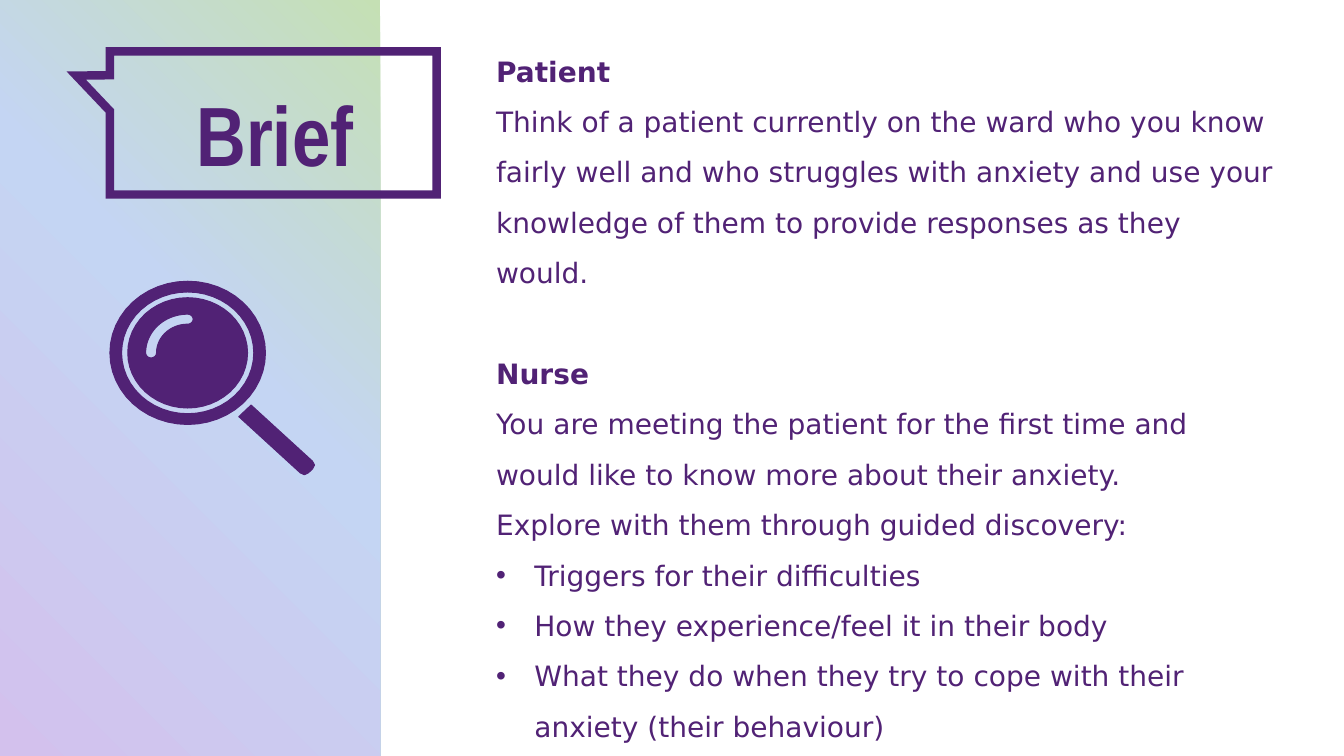
import math

import pptx
import pptx.dml.color
import pptx.enum.shapes
import pptx.enum.text
import pptx.oxml
import pptx.oxml.ns
import pptx.util

W, H = 13.33, 7.5
PURPLE = "512275"
PANEL_STOPS = [(0, "D3C1ED"), (56, "C4D5F3"), (100, "C5E0B4")]
BRIEF = [
    ("heading", "Patient"),
    ("text", "Think of a patient currently on the ward who you know fairly well and who "
             "struggles with anxiety and use your knowledge of them to provide responses "
             "as they would."),
    ("heading", "Nurse"),
    ("text", "You are meeting the patient for the first time and would like to know more "
             "about their anxiety."),
    ("text", "Explore with them through guided discovery:"),
    ("bullet", "Triggers for their difficulties"),
    ("bullet", "How they experience/feel it in their body"),
    ("bullet", "What they do when they try to cope with their anxiety (their behaviour)"),
]


def rgb(value):
    """Turn a hex string into a colour."""
    return pptx.dml.color.RGBColor.from_string(value)


def inches(*lengths):
    """Convert lengths in inches to EMU."""
    return [pptx.util.Inches(v) for v in lengths]


def xml(tag, body="", **attrs):
    """Build one DrawingML element."""
    listed = "".join(f' {k}="{v}"' for k, v in attrs.items())
    ns = pptx.oxml.ns.nsdecls("a")
    return pptx.oxml.parse_xml(f"<a:{tag} {ns}{listed}>{body}</a:{tag}>")


def place(sp, x, y, w, h):
    """Move a placeholder into a box and ready its text frame."""
    sp.left, sp.top, sp.width, sp.height = inches(x, y, w, h)
    tf = sp.text_frame
    tf.word_wrap = True
    tf.auto_size = pptx.enum.text.MSO_AUTO_SIZE.NONE
    tf.vertical_anchor = pptx.enum.text.MSO_ANCHOR.TOP
    return tf


def style(p, name, size, bold, spacing):
    """Set the font and line spacing of a paragraph."""
    p.font.name, p.font.size, p.font.bold = name, pptx.util.Pt(size), bold
    p.font.color.rgb = rgb(PURPLE)
    p.alignment = pptx.enum.text.PP_ALIGN.LEFT
    p.line_spacing = spacing
    p.space_before = pptx.util.Pt(0)


def indent(p, left, first):
    """Set the left margin and first-line indent in inches."""
    pPr = p._p.get_or_add_pPr()
    pPr.set("marL", str(inches(left)[0]))
    pPr.set("indent", str(inches(first)[0]))
    return pPr


def side_panel(s, x, y, w, h):
    """Draw the gradient panel behind everything else."""
    sp = s.shapes.add_shape(pptx.enum.shapes.MSO_SHAPE.RECTANGLE, *inches(x, y, w, h))
    sp.shadow.inherit = False
    stops = "".join(f'<a:gs pos="{pos * 1000}"><a:srgbClr val="{c}"/></a:gs>'
                    for pos, c in PANEL_STOPS)
    centre = ('<a:path path="circle"><a:fillToRect t="100000" r="100000"/></a:path>')
    sp._element.spPr.insert(2, xml("gradFill", f"<a:gsLst>{stops}</a:gsLst>{centre}"))
    sp.line.fill.background()
    s.shapes._spTree.insert(2, sp._element)


def title_callout(s, x, y, w, h):
    """Draw the speech bubble with the slide title in it."""
    sp = s.shapes.add_shape(pptx.enum.shapes.MSO_SHAPE.RECTANGULAR_CALLOUT,
                            *inches(x, y, w, h))
    sp.shadow.inherit = False
    sp.adjustments[0], sp.adjustments[1] = -0.603, -0.331
    sp.fill.background()
    sp.line.color.rgb = rgb(PURPLE)
    sp.line.width = pptx.util.Pt(6)
    sp.line._ln.append(xml("miter", lim=800000))
    tf = place(s.shapes.title, x + 0.57, y + 0.06, w * 2 / 3, h - 0.11)
    tf.text = "Brief"
    p = tf.paragraphs[0]
    style(p, "Arial Narrow", 60, True, 1.2)
    indent(p, 0.19, 0)


def outline(s, contours):
    """Draw a filled freeform from closed contours given in inches."""
    contours = [[inches(*pt) for pt in c] for c in contours]
    fb = s.shapes.build_freeform(*contours[0][0])
    fb.add_line_segments(contours[0][1:], close=True)
    for c in contours[1:]:
        fb.move_to(*c[0])
        fb.add_line_segments(c[1:], close=True)
    sp = fb.convert_to_shape()
    sp.shadow.inherit = False
    sp.fill.solid()
    sp.fill.fore_color.rgb = rgb(PURPLE)
    sp.line.color.rgb = rgb(PURPLE)
    sp.line.width = pptx.util.Pt(0.75)


def magnifier(s, x, y, w, h):
    """Draw the magnifying glass: rim, lens with glare, and handle."""
    rx, ry = w * 0.38, h * 0.37

    def arc(radius, start, end, cx=0, cy=0):
        """Trace an arc in units of the rim radius."""
        angles = [math.radians(start + (end - start) * i / 48) for i in range(49)]
        return [(x + rx * (1 + cx + radius * math.cos(a)),
                 y + ry * (1 + cy + radius * math.sin(a))) for a in angles]

    outer, inner = 0.54, 0.4
    mid, cap = (outer + inner) / 2, (outer - inner) / 2
    glare = (arc(outer, 180, 270) + arc(cap, 270, 450, cy=-mid)
             + arc(inner, 270, 180) + arc(cap, 0, 180, cx=-mid))
    handle = [(0.69, 0.64), (0.63, 0.7), (0.93, 0.99), (0.95, 1), (0.97, 0.99),
              (0.99, 0.97), (1, 0.95), (0.99, 0.93)]
    outline(s, [arc(1, 0, 360), arc(0.85, 0, 360)])
    outline(s, [arc(0.77, 0, 360), glare])
    outline(s, [[(x + w * u, y + h * v) for u, v in handle]])


def brief_text(s, x, y, w, h):
    """Fill the body placeholder with the two role briefs."""
    tf = place(s.placeholders[1], x, y, w, h)
    for i, (kind, text) in enumerate(BRIEF):
        p = tf.add_paragraph() if i else tf.paragraphs[0]
        p.text = text
        style(p, "DejaVu Sans", 20, kind == "heading", 1.5)
        if kind == "heading" and i:
            p.space_before = pptx.util.Pt(36)
        if kind == "bullet":
            pPr = indent(p, 0.38, -0.38)
            marks = [xml("buFont", typeface="Arial"), xml("buChar", char="•")]
        else:
            pPr = indent(p, 0, 0)
            marks = [xml("buNone")]
        for mark in marks:
            pPr.insert_element_before(mark, "a:tabLst", "a:defRPr", "a:extLst")


def main():
    """Build the slide and save it."""
    prs = pptx.Presentation()
    prs.slide_width, prs.slide_height = inches(W, H)
    s = prs.slides.add_slide(prs.slide_layouts[1])
    side_panel(s, 0, 0, 3.77, H)
    title_callout(s, 1.09, 0.51, 3.24, 1.42)
    magnifier(s, 1.09, 2.79, 2.03, 1.92)
    brief_text(s, 4.82, 0.32, 7.92, 7.17)
    prs.save("out.pptx")


if __name__ == "__main__":
    main()
